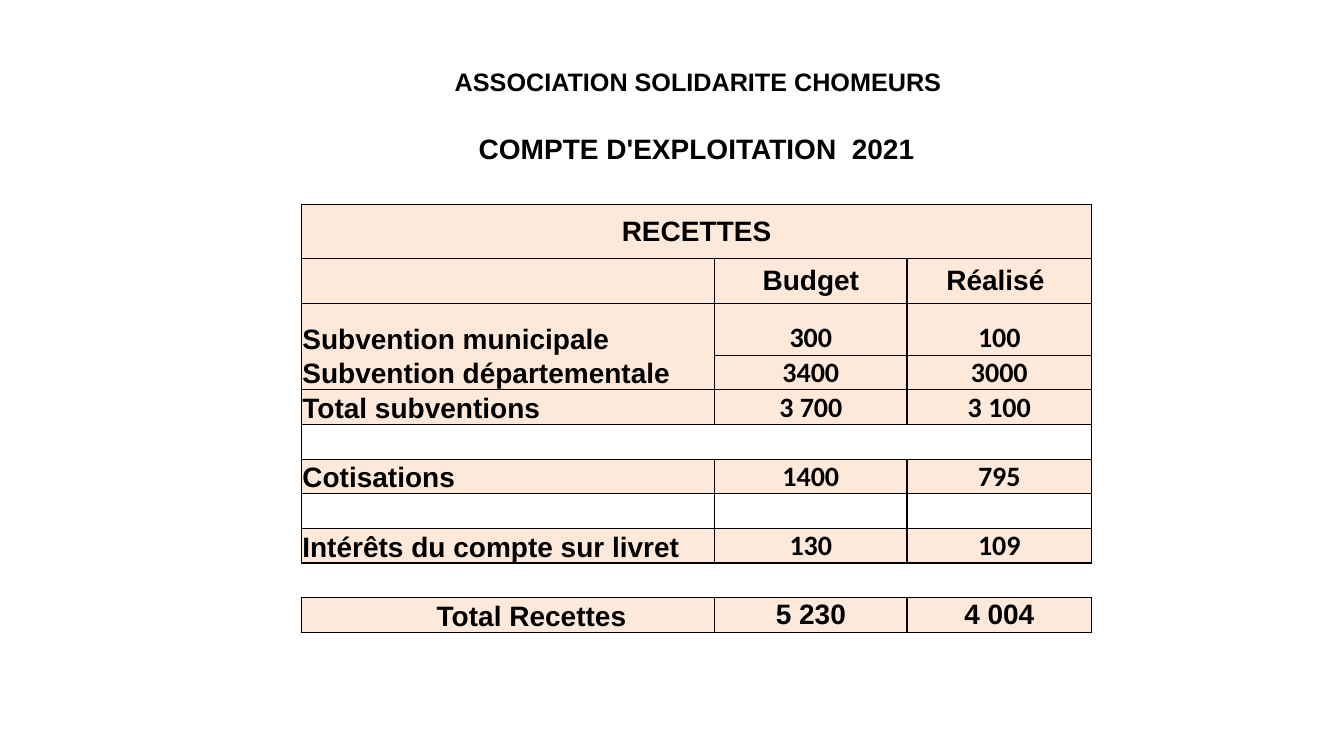
"""Build the 2021 income statement slide of the association."""
import pptx
import pptx.util
import pptx.dml.color
import pptx.enum.text
from dataclasses import dataclass
from lxml import etree
from pptx.oxml.ns import qn


@dataclass(frozen=True)
class Theme:
    ink: str = "000000"
    paper: str = "FFFFFF"
    peach: str = "FDE9D9"
    title_size: int = 18
    body_size: int = 20
    label_font: str = "Arial"
    number_font: str = "Calibri"
    rule: float = 1
    thin_rule: float = 0.5


theme = Theme()
Cm, Pt = pptx.util.Cm, pptx.util.Pt
ALIGN = pptx.enum.text.PP_ALIGN
ANCHOR = pptx.enum.text.MSO_ANCHOR
RGB = pptx.dml.color.RGBColor.from_string


def set_border(cell, side, width):
    ln = etree.SubElement(cell._tc.get_or_add_tcPr(), qn(f"a:ln{side}"), w=str(Pt(width)))
    if width:
        fill = etree.SubElement(ln, qn("a:solidFill"))
        etree.SubElement(fill, qn("a:srgbClr"), val=theme.ink)
    else:
        etree.SubElement(ln, qn("a:noFill"))


BOX = ("LRTB",) * 3
BARE = ("",) * 3
BLANK = ("", "", "")
LINE = 0.87

rows = [
    (1.22, ("ASSOCIATION SOLIDARITE CHOMEURS", "", ""), theme.paper, BARE),
    (0.79, BLANK, theme.paper, BARE),
    (0.94, ("COMPTE D'EXPLOITATION  2021", "", ""), theme.paper, BARE),
    (0.99, BLANK, theme.paper, ("B",) * 3),
    (1.35, ("RECETTES", "", ""), theme.peach, BOX),
    (1.14, ("", "Budget", "Réalisé "), theme.peach, BOX),
    (1.3, ("Subvention municipale", "300", "100"), theme.peach, ("LRT", "LRTB", "LRTB")),
    (LINE, ("Subvention départementale", "3400", "3000"), theme.peach, ("LRB", "LRTB", "LRTB")),
    (LINE, ("Total subventions", "3 700", "3 100"), theme.peach, BOX),
    (LINE, BLANK, theme.paper, ("LTB", "TB", "RTB")),
    (LINE, ("Cotisations", "1400", "795"), theme.peach, BOX),
    (LINE, BLANK, theme.paper, BOX),
    (LINE, ("Intérêts du compte sur livret", "130", "109"), theme.peach, BOX),
    (LINE, BLANK, theme.paper, ("TB",) * 3),
    (LINE, ("Total Recettes", "5 230", "4 004"), theme.peach, BOX),
]
TITLE, HEADING, RECEIPTS, FIRST_GRANT, TOTAL = 0, 2, 4, 6, 14
thin_below = {(5, 2), (6, 1), (6, 2), (11, 2)}
left_insets = {(TITLE, 0): 3.86, (TOTAL, 0): 1.2}
column_widths = (10.41, 4.85, 4.65)

prs = pptx.Presentation()
prs.slide_width, prs.slide_height = Cm(33.87), Cm(19.05)
s = prs.slides.add_slide(prs.slide_layouts[6])

height = sum(row[0] for row in rows)
table = s.shapes.add_table(len(rows), 3, Cm(7.6), Cm(1.22),
                           Cm(sum(column_widths)), Cm(height)).table
table.first_row = False
table.horz_banding = False
for column, width in zip(table.columns, column_widths):
    column.width = Cm(width)

for i, (row_height, texts, fill, sides) in enumerate(rows):
    table.rows[i].height = Cm(row_height)
    for j, text in enumerate(texts):
        cell = table.cell(i, j)
        cell.margin_left = Cm(left_insets.get((i, j), 0.02))
        cell.margin_right = Cm(0.02)
        cell.margin_top = Cm(0.01)
        cell.margin_bottom = 0
        at_bottom = i != RECEIPTS and (j == 0 or i == FIRST_GRANT)
        cell.vertical_anchor = ANCHOR.BOTTOM if at_bottom else ANCHOR.MIDDLE

        for side in "LRTB":
            thin = (side == "B" and (i, j) in thin_below) or (side == "T" and (i - 1, j) in thin_below)
            width = theme.thin_rule if thin else theme.rule
            set_border(cell, side, width if side in sides[j] else 0)
        cell.fill.solid()
        cell.fill.fore_color.rgb = RGB(fill)

        if text:
            p = cell.text_frame.paragraphs[0]
            centred = j > 0 or i in (HEADING, RECEIPTS, TOTAL)
            p.alignment = ALIGN.CENTER if centred else ALIGN.LEFT
            r = p.add_run()
            r.text = text
            is_amount = j > 0 and FIRST_GRANT <= i < TOTAL
            r.font.name = theme.number_font if is_amount else theme.label_font
            r.font.size = Pt(theme.title_size if i == TITLE else theme.body_size)
            r.font.bold = True
            r.font.color.rgb = RGB(theme.ink)

for i in (TITLE, HEADING, RECEIPTS):
    table.cell(i, 0).merge(table.cell(i, 2))

prs.save("out.pptx")
